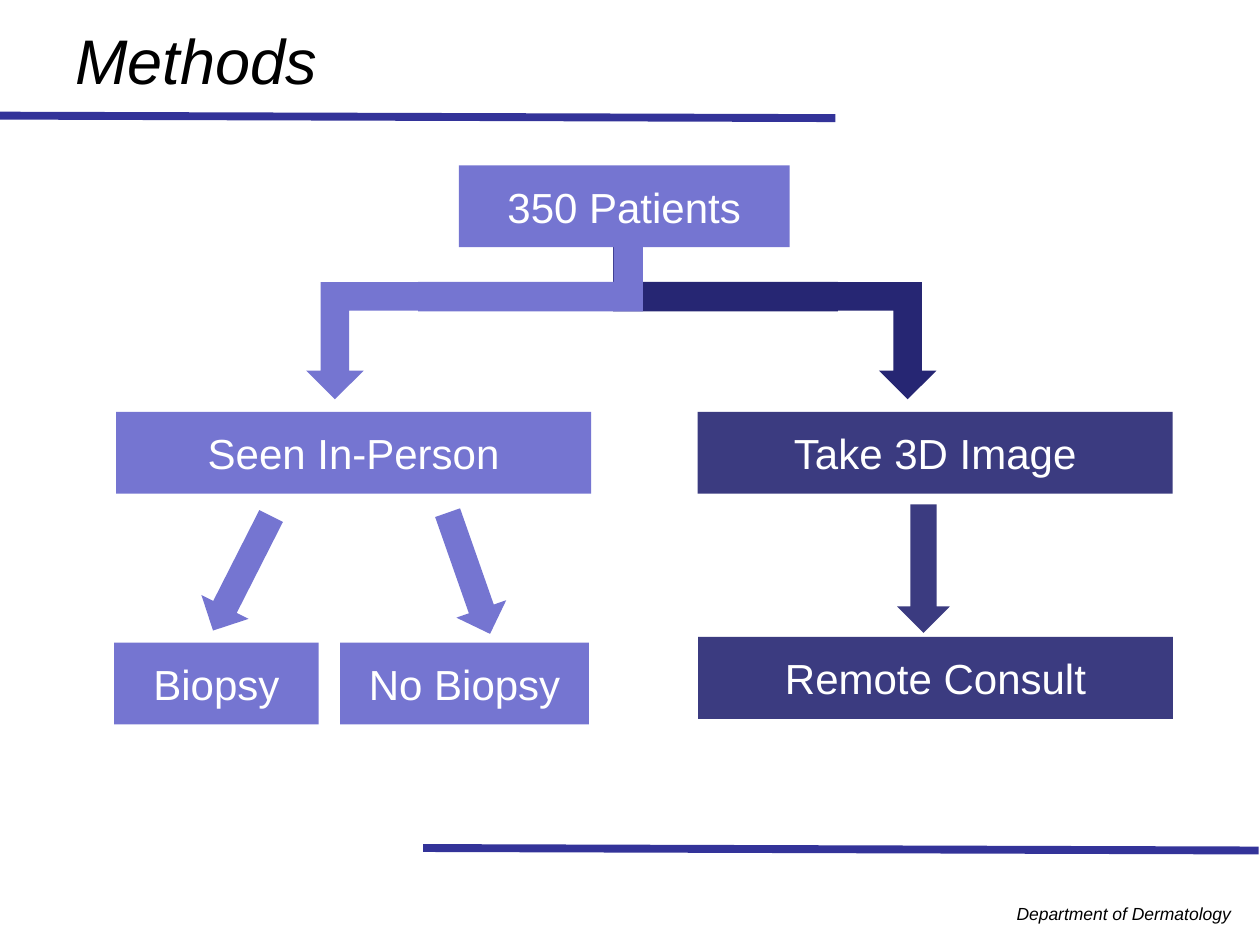
from dataclasses import dataclass

from lxml.etree import SubElement
from pptx import Presentation
from pptx.dml.color import RGBColor
from pptx.enum.shapes import MSO_CONNECTOR as Connector, MSO_SHAPE as Shape
from pptx.enum.text import MSO_ANCHOR as Anchor, PP_ALIGN as Align
from pptx.oxml.ns import qn
from pptx.util import Pt

LILAC = "7575D1"
NAVY = "262673"
RULE = "333399"
WHITE = "FFFFFF"
BLACK = "000000"
FONT = "Arial"
STEP_HEIGHT = 46.8
BEND_HEIGHT = 67
ARROW_LENGTH, ARROW_WIDTH = 73.4, 30.2


@dataclass(frozen=True)
class Step:
    text: str
    left: float
    top: float
    width: float
    color: str = LILAC
    opacity: int = 100


@dataclass(frozen=True)
class Bend:
    left: float
    top: float
    width: float
    color: str
    flipped: bool = False
    rotation: float = 0
    head: float = 0.25


@dataclass(frozen=True)
class Arrow:
    left: float
    top: float
    rotation: float
    color: str = LILAC
    opacity: int = 100


@dataclass(frozen=True)
class Rule:
    left: float
    top: float
    length: float = 477.4
    drop: float = 1.4


STEMS = [
    Bend(342, 110.9, 136.8, NAVY, flipped=True, head=0),
    Bend(239, 110.9, 136.8, LILAC, head=0),
]
BRANCHES = [
    Bend(175, 161.2, 65.5, LILAC, rotation=180),
    Bend(469.5, 161.2, 65.5, NAVY, flipped=True, rotation=180),
]
STEPS = [
    Step("350 Patients", 262.2, 94.5, 189),
    Step("Seen In-Person", 66.4, 235.3, 271.4),
    Step("Take 3D Image", 398.7, 235.3, 271.4, NAVY, 90),
    Step("Remote Consult", 398.9, 364, 271.4, NAVY, 90),
    Step("Biopsy", 65.3, 367.2, 116.8),
    Step("No Biopsy", 194.4, 367.2, 142.2),
]
ARROWS = [
    Arrow(491, 309.8, 90, NAVY, 90),
    Arrow(101.6, 312.5, 116.9),
    Arrow(231.2, 312.5, 70.7),
]
RULES = [Rule(0, 66.1), Rule(241.8, 484.6)]


def rgb(value: str) -> RGBColor:
    return RGBColor.from_string(value)


def add_block(page, kind, left: float, top: float, width: float, height: float,
              color: str, opacity: int = 100, rotation: float = 0):
    block = page.shapes.add_shape(kind, Pt(left), Pt(top), Pt(width), Pt(height))
    block.shadow.inherit = False
    block.line.fill.background()
    block.fill.solid()
    block.fill.fore_color.rgb = rgb(color)
    block.rotation = rotation
    if opacity < 100:
        tint = block.element.spPr.find(qn("a:solidFill"))[0]
        SubElement(tint, qn("a:alpha"), val=str(opacity * 1000))
    return block


def write(box, text: str, *, size: float, color: str = BLACK, italic: bool = False,
          align=Align.LEFT, anchor=Anchor.TOP, margins: tuple = (7.2, 3.6),
          wrap: bool = True) -> None:
    frame = box.text_frame
    frame.word_wrap = wrap
    frame.vertical_anchor = anchor
    frame.margin_left = frame.margin_right = Pt(margins[0])
    frame.margin_top = frame.margin_bottom = Pt(margins[1])
    para = frame.paragraphs[0]
    para.alignment = align
    span = para.add_run()
    span.text = text
    span.font.name = FONT
    span.font.size = Pt(size)
    span.font.italic = italic
    span.font.color.rgb = rgb(color)


def add_step(page, step: Step) -> None:
    box = add_block(page, Shape.RECTANGLE, step.left, step.top, step.width,
                    STEP_HEIGHT, step.color, step.opacity)
    write(box, step.text, size=24, color=WHITE, align=Align.CENTER,
          anchor=Anchor.MIDDLE, margins=(9.4, 5))


def add_bend(page, bend: Bend) -> None:
    block = add_block(page, Shape.BENT_UP_ARROW, bend.left, bend.top, bend.width,
                      BEND_HEIGHT, bend.color, rotation=bend.rotation)
    block.adjustments[2] = bend.head
    if bend.flipped:
        block.element.spPr.get_or_add_xfrm().set("flipH", "1")


def add_arrow(page, arrow: Arrow) -> None:
    add_block(page, Shape.RIGHT_ARROW, arrow.left, arrow.top, ARROW_LENGTH,
              ARROW_WIDTH, arrow.color, arrow.opacity, arrow.rotation)


def add_rule(page, rule: Rule) -> None:
    line = page.shapes.add_connector(
        Connector.STRAIGHT, Pt(rule.left), Pt(rule.top),
        Pt(rule.left + rule.length), Pt(rule.top + rule.drop))
    line.line.color.rgb = rgb(RULE)
    line.line.width = Pt(4.5)
    SubElement(line.element.spPr, qn("a:effectLst"))


def main() -> None:
    deck = Presentation()
    deck.slide_width, deck.slide_height = Pt(720), Pt(540)
    page = deck.slides.add_slide(deck.slide_layouts[6])

    for rule in RULES:
        add_rule(page, rule)
    footer = page.shapes.add_textbox(Pt(573.8), Pt(512.6), Pt(137.5), Pt(19.4))
    write(footer, "Department of Dermatology", size=10, italic=True, wrap=False)
    for stem in STEMS:
        add_bend(page, stem)
    title = page.shapes.add_textbox(Pt(36), Pt(0), Pt(648), Pt(67.7))
    write(title, "Methods", size=36, italic=True, anchor=Anchor.MIDDLE)
    for step in STEPS:
        add_step(page, step)
    for branch in BRANCHES:
        add_bend(page, branch)
    for arrow in ARROWS:
        add_arrow(page, arrow)

    deck.save("out.pptx")


if __name__ == "__main__":
    main()
